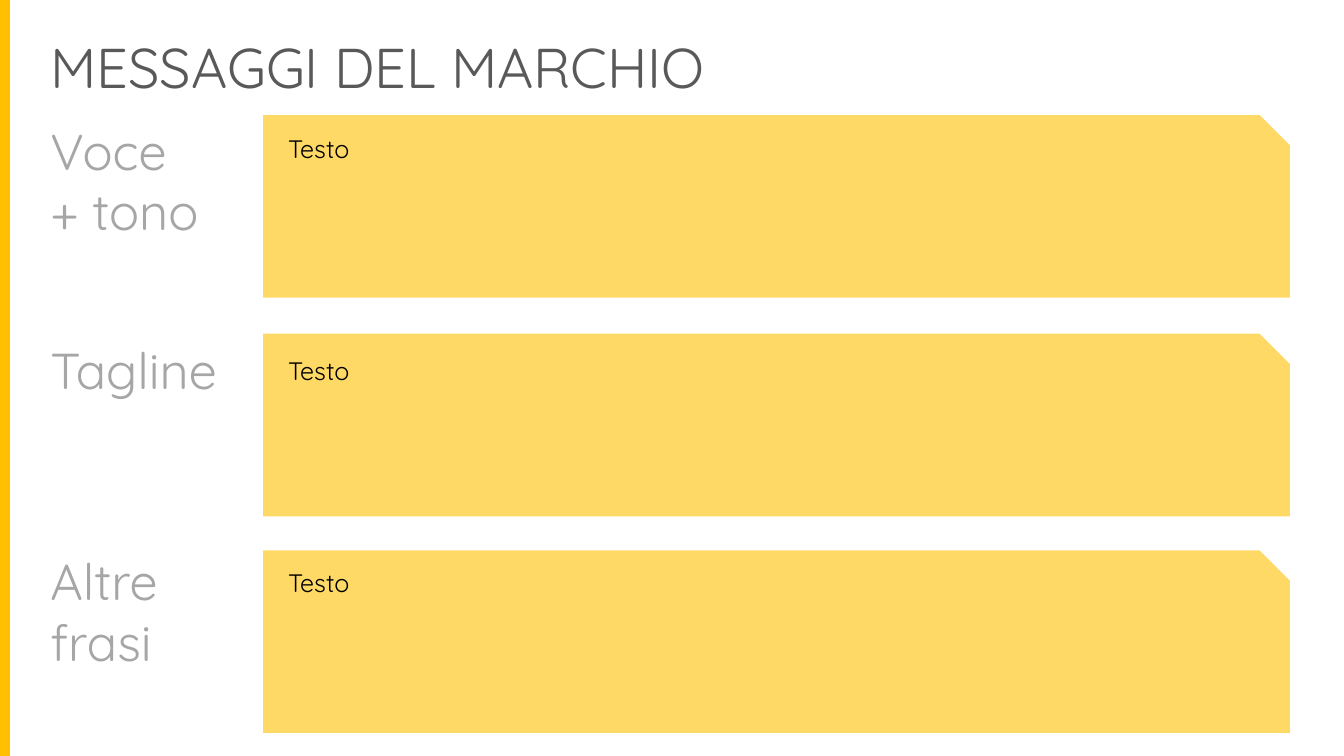
from pptx import Presentation
from pptx.dml.color import RGBColor
from pptx.enum.shapes import MSO_SHAPE
from pptx.util import Cm, Pt

TITLE = "MESSAGGI DEL MARCHIO"
# label lines, label width, then tops of panel, label and body text (cm)
SECTIONS = [
    (["Voce", "+ tono"], 6.5, 2.9, 2.9, 3.23),
    (["Tagline"], 6.5, 8.41, 8.41, 8.84),
    (["Altre frasi"], 5.74, 13.87, 13.74, 14.17),
]
BODY = "Testo"

SLIDE_WIDTH, SLIDE_HEIGHT = 33.87, 19.05
LEFT_MARGIN, PANEL_LEFT, BODY_LEFT = 1.02, 6.63, 7.01
PANEL_WIDTH, PANEL_HEIGHT = 25.88, 4.6
STRIPE_WIDTH = 0.25

TITLE_FORMAT = {"name": "Quicksand", "size": Pt(40)}
LABEL_FORMAT = {"name": "Quicksand", "size": Pt(36)}
BODY_FORMAT = {"name": "Quicksand", "size": Pt(18)}


def paint(color_format, hex_color):
    color_format.rgb = RGBColor.from_string(hex_color)


def add_block(page, preset, left, top, width, height, hex_color):
    block = page.shapes.add_shape(preset, Cm(left), Cm(top), Cm(width), Cm(height))
    block.shadow.inherit = False
    block.fill.solid()
    paint(block.fill.fore_color, hex_color)
    block.line.fill.background()


def add_text(page, lines, left, top, width, height, text_format, hex_color):
    box = page.shapes.add_textbox(Cm(left), Cm(top), Cm(width), Cm(height))
    frame = box.text_frame
    frame.word_wrap = True
    for index, line in enumerate(lines):
        para = frame.add_paragraph() if index else frame.paragraphs[0]
        span = para.add_run()
        span.text = line
        for attribute, value in text_format.items():
            setattr(span.font, attribute, value)
        paint(span.font.color, hex_color)


def main():
    deck = Presentation()
    deck.slide_width, deck.slide_height = Cm(SLIDE_WIDTH), Cm(SLIDE_HEIGHT)
    page = deck.slides.add_slide(deck.slide_layouts[6])

    add_block(page, MSO_SHAPE.RECTANGLE, 0, 0, STRIPE_WIDTH, SLIDE_HEIGHT, "FFC000")
    add_text(page, [TITLE], LEFT_MARGIN, 0.69, 20.42, 1.96, TITLE_FORMAT, "595959")

    for label, label_width, panel_top, label_top, body_top in SECTIONS:
        label_height = 1.8 if label == ["Tagline"] else 3.33
        add_block(page, MSO_SHAPE.SNIP_1_RECTANGLE, PANEL_LEFT, panel_top,
                  PANEL_WIDTH, PANEL_HEIGHT, "FFD966")
        add_text(page, label, LEFT_MARGIN, label_top, label_width, label_height,
                 LABEL_FORMAT, "A6A6A6")
        add_text(page, [BODY], BODY_LEFT, body_top, 17.22, 1.02, BODY_FORMAT, "000000")

    deck.save("out.pptx")


if __name__ == "__main__":
    main()
